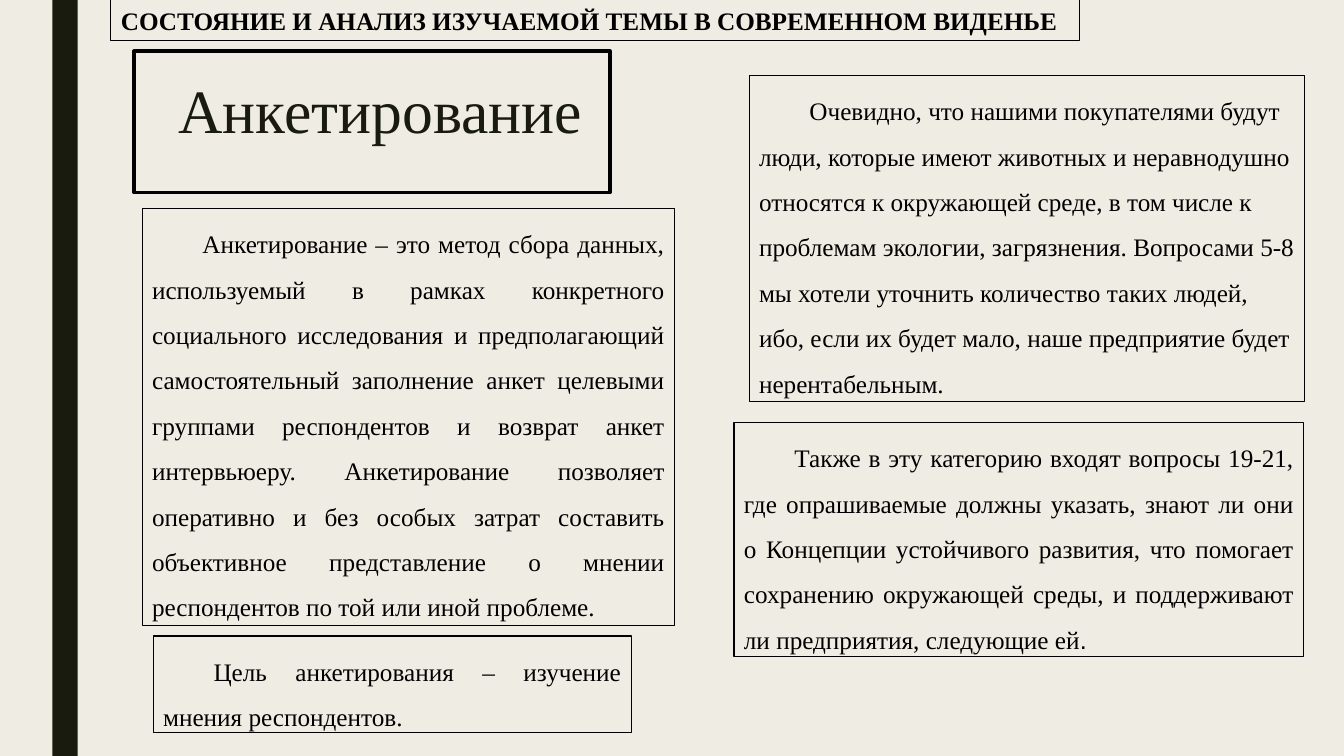
from pptx import Presentation
from pptx.dml.color import RGBColor
from pptx.enum.shapes import MSO_SHAPE
from pptx.enum.text import MSO_ANCHOR, MSO_AUTO_SIZE, PP_ALIGN
from pptx.util import Inches, Pt

RECTANGLE = MSO_SHAPE.RECTANGLE
TOP = MSO_ANCHOR.TOP
GROW = MSO_AUTO_SIZE.SHAPE_TO_FIT_TEXT
FIXED = MSO_AUTO_SIZE.NONE
LEFT, JUSTIFY = PP_ALIGN.LEFT, PP_ALIGN.JUSTIFY

PAPER, DARK, BLACK = "EFEDE3", "191B0E", "000000"
SERIF, SANS = "Times New Roman", "Arial"


def color(value):
    return RGBColor.from_string(value)


class Slide:
    """Holds the style and the current page."""

    def __init__(self, deck):
        self.page = deck.slides.add_slide(deck.slide_layouts[5])
        background = self.page.background.fill
        background.solid()
        background.fore_color.rgb = color(PAPER)

    def add_span(self, para, text, size, ink, font=SERIF, bold=False):
        span = para.add_run()
        span.text = text
        style = {"name": font, "size": Pt(size), "bold": bold}
        for key, value in style.items():
            setattr(span.font, key, value)
        span.font.color.rgb = color(ink)

    def format_frame(self, box, autosize):
        style = {"word_wrap": True, "vertical_anchor": TOP, "auto_size": autosize}
        for key, value in style.items():
            setattr(box.text_frame, key, value)
        return box.text_frame.paragraphs[0]

    def title(self, text, place):
        box = self.page.shapes.title
        for key, value in zip(("left", "top", "width", "height"), place):
            setattr(box, key, Inches(value))
        para = self.format_frame(box, FIXED)
        para.alignment, para.line_spacing = LEFT, 0.89
        self.add_span(para, text, 44, DARK)

    def rectangle(self, place, fill=None, line=None, weight=0.75):
        box = self.page.shapes.add_shape(RECTANGLE, *map(Inches, place))
        box.shadow.inherit = False
        if fill:
            box.fill.solid()
            box.fill.fore_color.rgb = color(fill)
        else:
            box.fill.background()
        if line:
            box.line.color.rgb = color(line)
            box.line.width = Pt(weight)
        else:
            box.line.fill.background()
        return box

    def heading(self, text, place):
        para = self.format_frame(self.rectangle(place, line=BLACK), GROW)
        para.alignment = LEFT
        self.add_span(para, text, 18, BLACK, bold=True)

    def passage(self, place, align, text, ending=""):
        para = self.format_frame(self.rectangle(place, line=BLACK), GROW)
        para.alignment, para.line_spacing = align, 1.5
        # First-line indent
        para._p.get_or_add_pPr().set("indent", str(Inches(0.5)))
        self.add_span(para, text, 18, BLACK)
        if ending:
            self.add_span(para, ending, 18, BLACK, font=SANS)


def main():
    deck = Presentation()
    deck.slide_width, deck.slide_height = Inches(13.33), Inches(7.5)
    slide = Slide(deck)

    # Side band, title and its frame
    slide.rectangle((0.52, 0, 0.25, 7.5), fill=DARK)
    slide.title("Анкетирование", (1.67, 0.75, 10.5, 1.62))
    slide.rectangle((1.33, 0.51, 4.72, 1.4), line=BLACK, weight=2.75)

    # Right column
    slide.passage(
        (7.43, 0.75, 5.51, 3.23), LEFT,
        "Очевидно, что нашими покупателями будут люди, которые имеют животных и "
        "неравнодушно относятся к окружающей среде, в том числе к проблемам "
        "экологии, загрязнения. Вопросами 5-8 мы хотели уточнить количество таких "
        "людей, ибо, если их будет мало, наше предприятие будет нерентабельным.")
    slide.passage(
        (7.28, 4.19, 5.65, 2.32), JUSTIFY,
        "Также в эту категорию входят вопросы 19-21, где опрашиваемые должны "
        "указать, знают ли они о Концепции устойчивого развития, что помогает "
        "сохранению окружающей среды, и поддерживают ли предприятия, следующие ей",
        ending=".")

    # Left column
    slide.passage(
        (1.41, 2.07, 5.28, 4.14), JUSTIFY,
        "Анкетирование – это метод сбора данных, используемый в рамках конкретного "
        "социального исследования и предполагающий самостоятельный заполнение анкет "
        "целевыми группами респондентов и возврат анкет интервьюеру. Анкетирование "
        "позволяет оперативно и без особых затрат составить объективное "
        "представление о мнении респондентов по той или иной проблеме.")
    slide.passage(
        (1.52, 6.31, 4.74, 0.96), JUSTIFY,
        "Цель анкетирования – изучение мнения респондентов.")

    # Section heading
    slide.heading("СОСТОЯНИЕ И АНАЛИЗ ИЗУЧАЕМОЙ ТЕМЫ В СОВРЕМЕННОМ ВИДЕНЬЕ",
                  (1.1, 0, 9.61, 0.4))

    deck.save("out.pptx")


if __name__ == "__main__":
    main()
